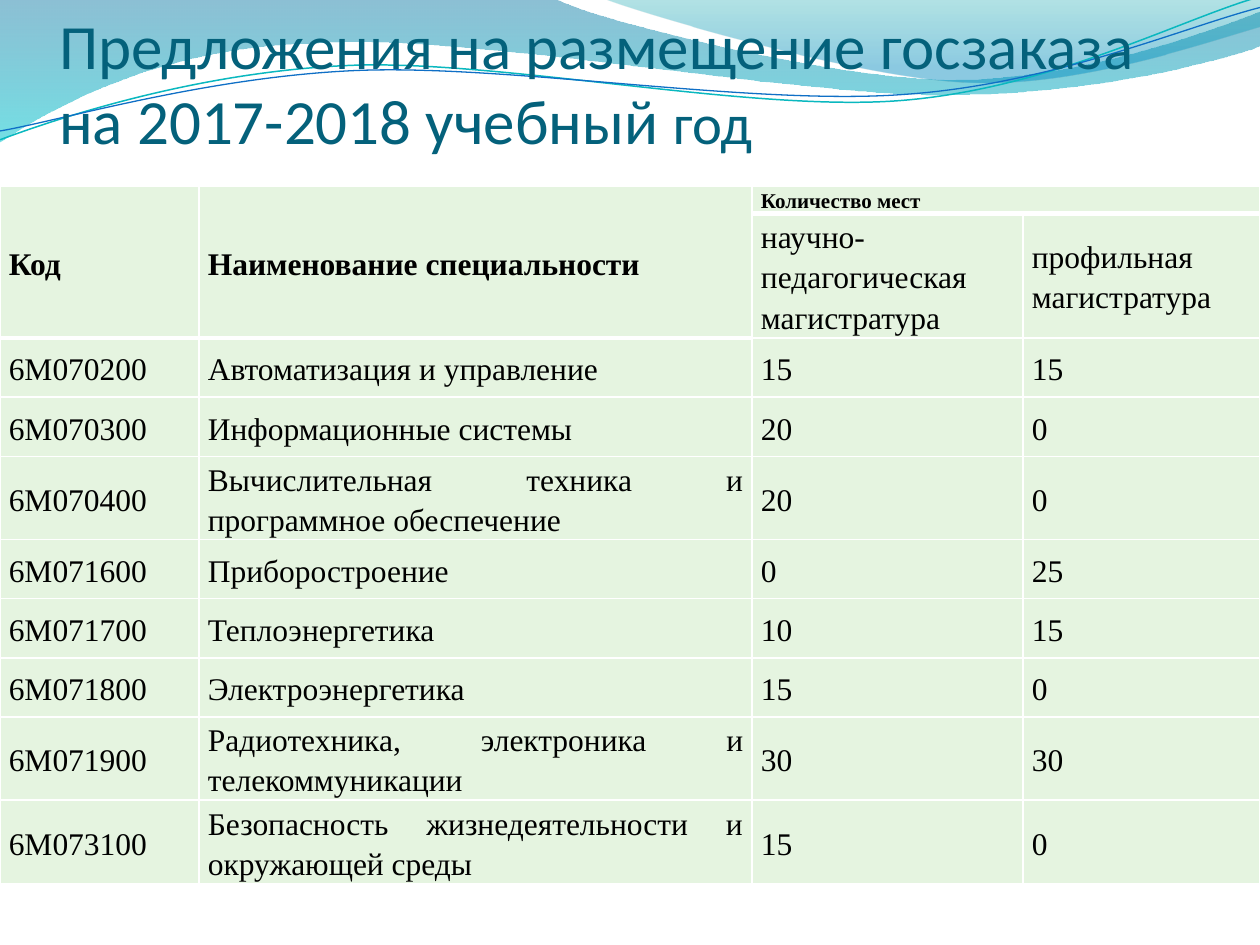
from dataclasses import dataclass
from math import cos, radians, sin

from lxml.etree import SubElement
from pptx import Presentation
from pptx.dml.color import RGBColor
from pptx.enum.text import MSO_ANCHOR, MSO_AUTO_SIZE, PP_ALIGN
from pptx.oxml.ns import qn
from pptx.util import Inches, Pt


@dataclass(frozen=True)
class Theme:
    title: str = "04617B"
    ink: str = "000000"
    cell: str = "E5F4E0"
    edge: str = "FFFFFF"
    teal: str = "0AB8BF"
    blue: str = "0F6FC6"
    head: str = "Calibri"
    body: str = "Times New Roman"
    big: float = 36
    tail: float = 32.4
    text: float = 18
    small: float = 12


THEME = Theme()
TILT = 2.7

BANDS = [
    ([(0, 0), (4.4, -0.01),
      (4.76, 0.17, 6.64, 0.63, 7.58, 0.63),
      (8.53, 0.63, 9.58, 0.26, 10, 0.09), (10.01, 0.36),
      (9.83, 0.44, 8.7, 0.76, 7.46, 0.75),
      (6.22, 0.75, 3.82, 0.28, 2.57, 0.34),
      (1.29, 0.36, 0.46, 0.83, -0.01, 1.13)],
     [(0, "0074A1", 45), (1, "00C6CF", 55)]),
    ([(4.79, -0.01),
      (5.09, 0.11, 6.82, 0.62, 7.69, 0.65),
      (8.56, 0.69, 9.61, 0.32, 10, 0.21), (10, 0)],
     [(0, "00A1A9", 30), (0.8, "008BBF", 45)]),
]

WAVES = [
    ([(0, 1.11),
      (0.48, 0.93, 1.58, 0.57, 2.77, 0.52),
      (3.95, 0.47, 5.93, 0.89, 7.13, 0.8),
      (8.33, 0.71, 9.38, 0.15, 9.98, -0.02)], THEME.teal, 0.85),
    ([(0, 1.04),
      (0.47, 0.96, 1.64, 0.61, 2.83, 0.56),
      (4.03, 0.51, 5.97, 0.84, 7.17, 0.75),
      (8.36, 0.67, 9.41, 0.21, 10, 0.06)], THEME.blue, 0.75),
]

COLS = [1.58, 4.39, 2.15, 1.88]
ROWS = [0.21, 0.99, 0.47, 0.47, 0.66, 0.47, 0.47, 0.47, 0.66, 0.66]
DATA = [
    ("Код", "Наименование специальности", "Количество мест", ""),
    ("", "", "научно-педагогическая магистратура", "профильная магистратура"),
    ("6М070200", "Автоматизация и управление", "15", "15"),
    ("6М070300", "Информационные системы", "20", "0"),
    ("6М070400", "Вычислительная техника и программное обеспечение", "20", "0"),
    ("6М071600", "Приборостроение", "0", "25"),
    ("6М071700", "Теплоэнергетика", "10", "15"),
    ("6М071800", "Электроэнергетика", "15", "0"),
    ("6М071900", "Радиотехника, электроника и телекоммуникации", "30", "30"),
    ("6М073100", "Безопасность жизнедеятельности и окружающей среды", "15", "0"),
]


def rgb(code):
    return RGBColor.from_string(code)


def write(par, text, size=THEME.text, font=THEME.body, color=THEME.ink, bold=False):
    run = par.add_run()
    run.text = text
    run.font.size = Pt(size)
    run.font.name = font
    run.font.bold = bold
    run.font.color.rgb = rgb(color)


def pairs(seg):
    return list(zip(seg[::2], seg[1::2]))


def turn(path, angle, mid=(5, 0.58)):
    c, s = cos(radians(angle)), sin(radians(angle))
    turned = []
    for seg in path:
        flat = []
        for x, y in pairs(seg):
            dx, dy = x - mid[0], y - mid[1]
            flat += [mid[0] + dx * c - dy * s, mid[1] + dx * s + dy * c]
        turned.append(flat)
    return turned


def outline(slide, path, close):
    path = [[Inches(v) for v in seg] for seg in path]
    pen = slide.shapes.build_freeform(*path[0])
    pen.add_line_segments([seg[-2:] for seg in path[1:]], close=close)
    shape = pen.convert_to_shape()
    shape.shadow.inherit = False
    lines = list(shape.element.iter(qn("a:lnTo")))
    for line, seg in zip(lines, path[1:]):
        if len(seg) == 2:
            continue
        curve = line.makeelement(qn("a:cubicBezTo"))
        for x, y in pairs(seg):
            SubElement(curve, qn("a:pt"), x=str(x - shape.left), y=str(y - shape.top))
        line.getparent().replace(line, curve)
    return shape


def band(slide, path, stops):
    shape = outline(slide, path, True)
    shape.line.fill.background()
    shape.fill.gradient()
    shape.fill.gradient_angle = 270
    for stop, (place, color, _) in zip(shape.fill.gradient_stops, stops):
        stop.position = place
        stop.color.rgb = rgb(color)
    tints = shape.element.spPr.findall(".//" + qn("a:srgbClr"))
    for tint, (_, _, alpha) in zip(tints, stops):
        SubElement(tint, qn("a:alpha"), val=str(alpha * 1000))


def wave(slide, path, color, width):
    shape = outline(slide, turn(path, TILT), False)
    shape.rotation = 360 - TILT
    shape.fill.background()
    shape.line.color.rgb = rgb(color)
    shape.line.width = Pt(width)


def heading(slide):
    title = slide.shapes.title
    slide.shapes.element.append(title.element)
    title.left, title.top = Inches(0.47), Inches(0)
    title.width, title.height = Inches(9), Inches(1.25)
    frame = title.text_frame
    frame.auto_size = MSO_AUTO_SIZE.NONE
    frame.word_wrap = True
    frame.vertical_anchor = MSO_ANCHOR.BOTTOM
    frame.margin_left = frame.margin_right = frame.margin_bottom = 0
    frame.margin_top = Inches(0.05)
    par = frame.paragraphs[0]
    par.alignment = PP_ALIGN.LEFT
    look = {"font": THEME.head, "color": THEME.title}
    write(par, "Предложения на размещение госзаказа на 2017-2018 учебный ",
          size=THEME.big, **look)
    write(par, "год", size=THEME.tail, **look)


def border(cell, thick):
    props = cell._tc.get_or_add_tcPr()
    for side in "LRTB":
        width = Pt(3 if thick and side == "B" else 1)
        line = SubElement(props, qn("a:ln" + side), w=str(width))
        fill = SubElement(line, qn("a:solidFill"))
        SubElement(fill, qn("a:srgbClr"), val=THEME.edge)


def fill_cell(cell, text, thick, **look):
    border(cell, thick)
    cell.fill.solid()
    cell.fill.fore_color.rgb = rgb(THEME.cell)
    cell.vertical_anchor = MSO_ANCHOR.MIDDLE
    cell.margin_left = cell.margin_right = Inches(0.07)
    cell.margin_top = cell.margin_bottom = 0
    par = cell.text_frame.paragraphs[0]
    par.alignment = PP_ALIGN.JUSTIFY
    par.line_spacing = 1.15
    par.space_after = Pt(10)
    if text:
        write(par, text, **look)


def places(slide):
    table = slide.shapes.add_table(
        len(ROWS), len(COLS), Inches(0), Inches(1.48),
        Inches(sum(COLS)), Inches(sum(ROWS))).table
    for col, width in zip(table.columns, COLS):
        col.width = Inches(width)
    for row, height in zip(table.rows, ROWS):
        row.height = Inches(height)
    for r, line in enumerate(DATA):
        for c, text in enumerate(line):
            size = THEME.small if r == 0 and c >= 2 else THEME.text
            thick = r == 0 or (r == 1 and c < 2)
            fill_cell(table.cell(r, c), text, thick, size=size, bold=r == 0)
    for c in range(2):
        table.cell(0, c).merge(table.cell(1, c))
    table.cell(0, 2).merge(table.cell(0, 3))


def main():
    deck = Presentation()
    deck.slide_width, deck.slide_height = Inches(10), Inches(7.5)
    slide = deck.slides.add_slide(deck.slide_layouts[5])
    for item in BANDS:
        band(slide, *item)
    for item in WAVES:
        wave(slide, *item)
    heading(slide)
    places(slide)
    deck.save("out.pptx")


if __name__ == "__main__":
    main()
